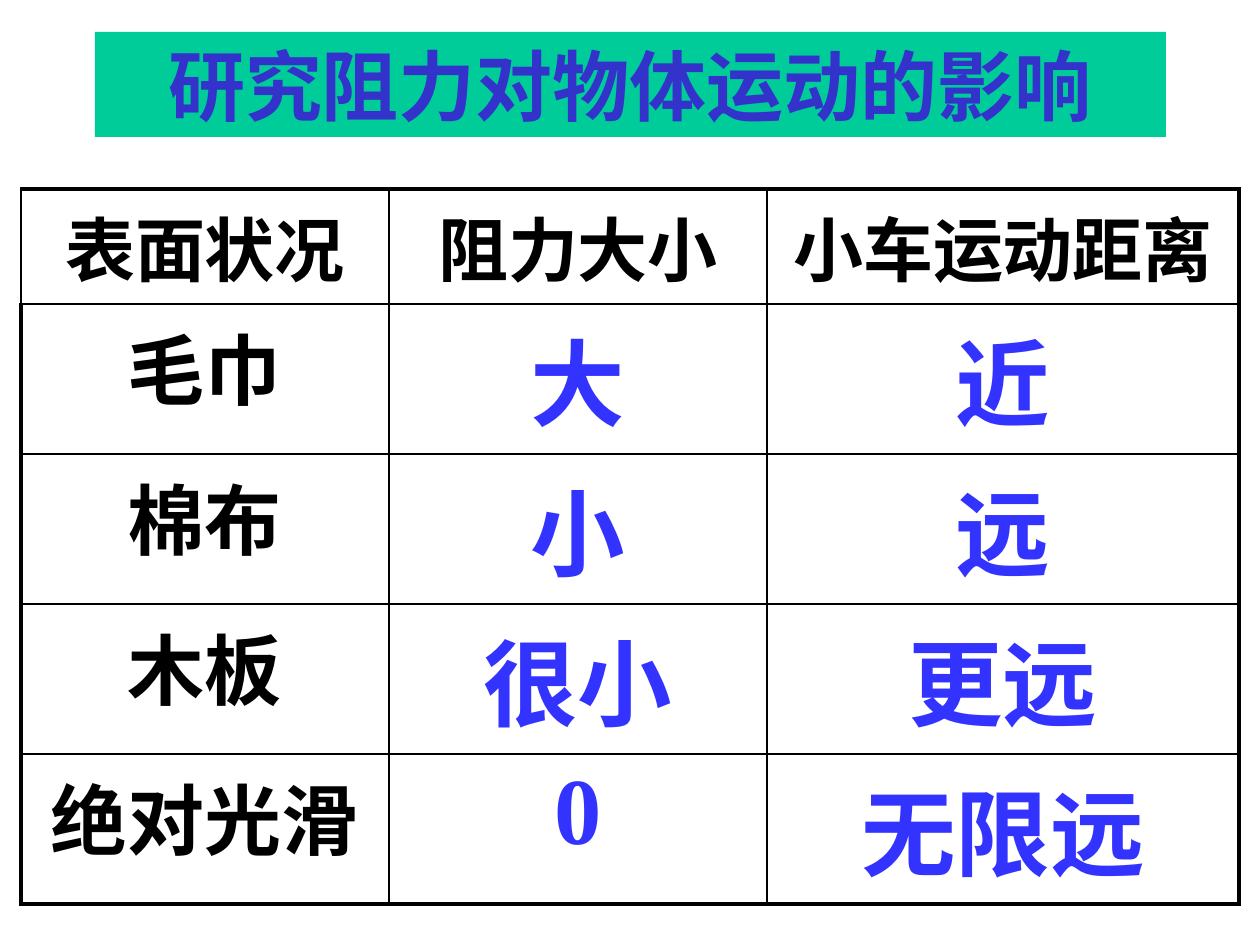
from lxml.etree import SubElement
from pptx import Presentation
from pptx.dml.color import RGBColor
from pptx.enum.lang import MSO_LANGUAGE_ID as Language
from pptx.enum.shapes import MSO_SHAPE as Shape
from pptx.enum.text import MSO_ANCHOR as Anchor, PP_ALIGN as Align
from pptx.oxml.ns import qn
from pptx.util import Emu, Pt

SCALE = 914400 / 126
FONT = "Times New Roman"
COLORS = {
    "banner": "00CC99",
    "title": "3333CC",
    "label": "000000",
    "result": "3333FF",
    "border": "000000",
}
THIN, THICK = 1, 2.25
COLUMN_WIDTHS = [368, 378, 472]
ROW_HEIGHTS = [115, 150, 150, 150, 150]
ROWS = [
    ["表面状况", "阻力大小", "小车运动距离"],
    ["毛巾", "大", "近"],
    ["棉布", "小", "远"],
    ["木板", "很小", "更远"],
    ["绝对光滑", "0", "无限远"],
]


def px(length):
    """Turn a length in px into EMU."""
    return Emu(round(length * SCALE))


def color(name):
    """Return the named colour."""
    return RGBColor.from_string(COLORS[name])


def write(text_frame, text, size, color_name):
    """Write one centred bold run and return its paragraph."""
    paragraph = text_frame.paragraphs[0]
    paragraph.alignment = Align.CENTER
    run = paragraph.add_run()
    run.text = text
    font = run.font
    font.name, font.size, font.bold = FONT, Pt(size), True
    font.color.rgb = color(color_name)
    font.language_id = Language.SIMPLIFIED_CHINESE
    return paragraph


def add_banner(slide, text):
    """Add the title on its coloured rectangle."""
    banner = slide.shapes.add_shape(Shape.RECTANGLE, px(95), px(32), px(1071), px(105))
    banner.shadow.inherit = False
    banner.fill.solid()
    banner.fill.fore_color.rgb = color("banner")
    banner.line.fill.background()
    banner.text_frame.word_wrap = True
    banner.text_frame.vertical_anchor = Anchor.MIDDLE
    write(banner.text_frame, text, 44, "title")


def set_borders(cell, widths):
    """Draw the left, right, top and bottom borders of a cell."""
    properties = cell._tc.get_or_add_tcPr()
    for side, width in zip("LRTB", widths):
        line = SubElement(properties, qn(f"a:ln{side}"), w=str(int(Pt(width))))
        fill = SubElement(line, qn("a:solidFill"))
        SubElement(fill, qn("a:srgbClr"), val=COLORS["border"])


def space_before(paragraph, percent):
    """Set the space before a paragraph as a share of its line."""
    spacing = SubElement(paragraph._p.get_or_add_pPr(), qn("a:spcBef"))
    SubElement(spacing, qn("a:spcPct"), val=str(percent * 1000))


def text_style(row, column):
    """Return the text size and colour name for a table position."""
    if row == 0:
        return 40, "label"
    return (44, "label") if column == 0 else (54, "result")


def add_results_table(slide):
    """Add the table of surfaces, resistance and distance."""
    last_row, last_column = len(ROWS) - 1, len(COLUMN_WIDTHS) - 1
    table = slide.shapes.add_table(
        len(ROWS), len(COLUMN_WIDTHS), px(21), px(189),
        px(sum(COLUMN_WIDTHS)), px(sum(ROW_HEIGHTS)),
    ).table
    table.first_row = table.horz_banding = False
    for column, width in zip(table.columns, COLUMN_WIDTHS):
        column.width = px(width)
    for row, height in zip(table.rows, ROW_HEIGHTS):
        row.height = px(height)
    for row, texts in enumerate(ROWS):
        for column, text in enumerate(texts):
            cell = table.cell(row, column)
            outer = (column == 0 and row > 0, column == last_column,
                     row == 0, row == last_row)
            set_borders(cell, [THICK if edge else THIN for edge in outer])
            cell.fill.background()
            paragraph = write(cell.text_frame, text, *text_style(row, column))
            space_before(paragraph, 20)


def main():
    """Build the slide and save it."""
    presentation = Presentation()
    presentation.slide_width, presentation.slide_height = px(1260), px(945)
    slide = presentation.slides.add_slide(presentation.slide_layouts[6])
    add_banner(slide, "研究阻力对物体运动的影响")
    add_results_table(slide)
    presentation.save("out.pptx")


if __name__ == "__main__":
    main()
